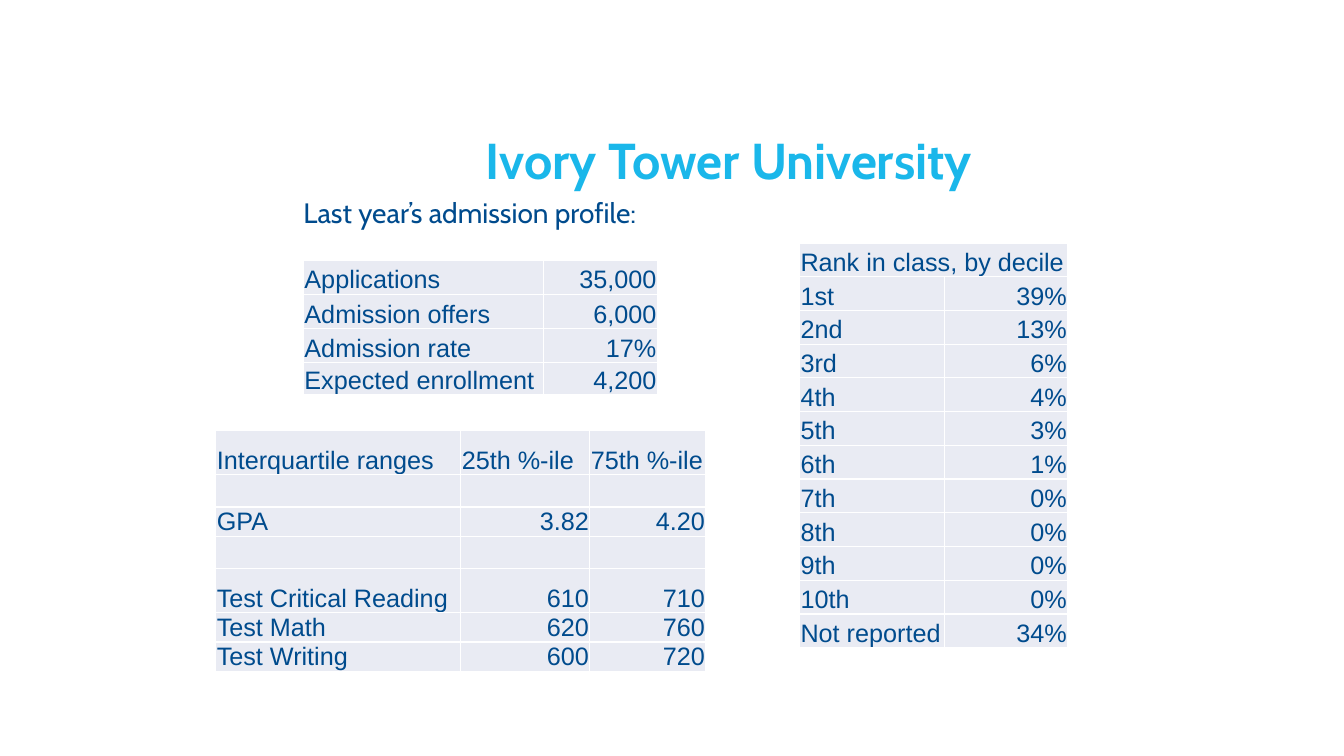
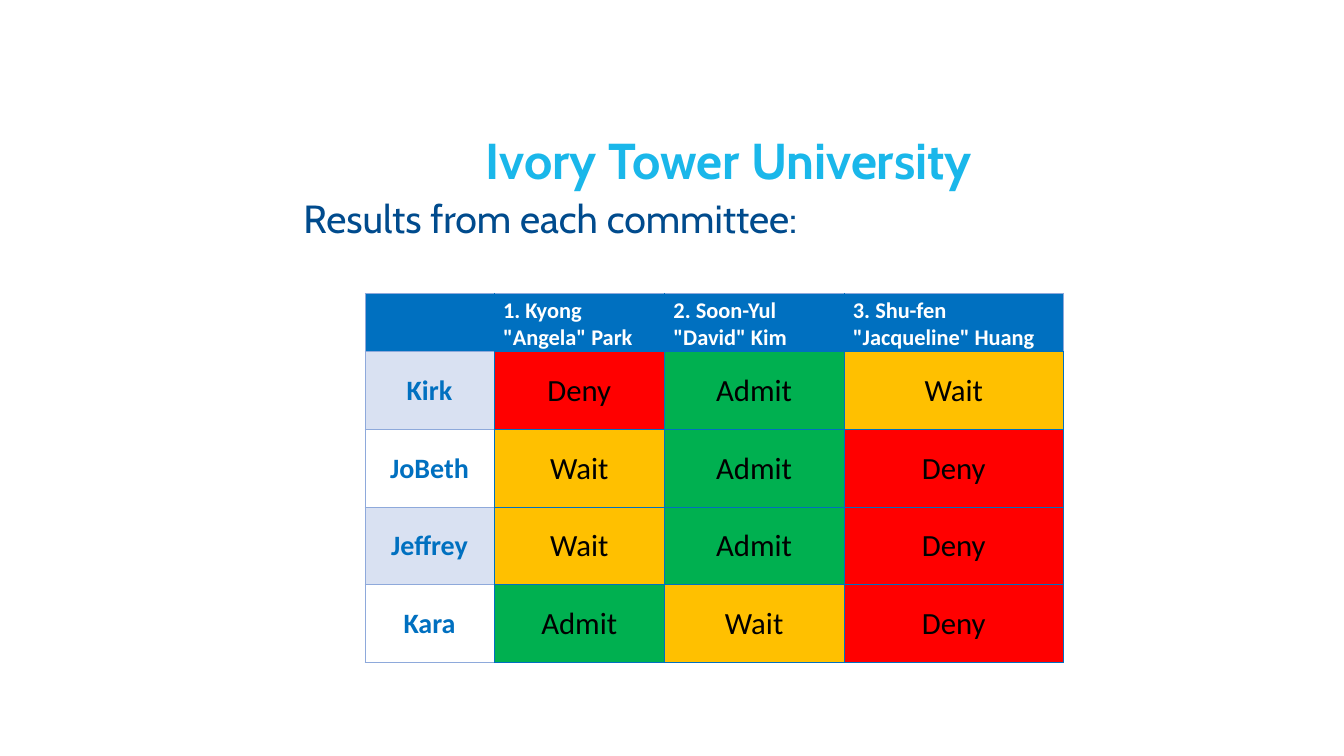
from lxml import etree
from pptx import Presentation
from pptx.dml.color import RGBColor
from pptx.enum.text import MSO_ANCHOR, MSO_AUTO_SIZE, PP_ALIGN
from pptx.oxml.ns import qn
from pptx.util import Inches, Pt

LEFT, CENTER, RIGHT = PP_ALIGN.LEFT, PP_ALIGN.CENTER, PP_ALIGN.RIGHT
TOP, MIDDLE, BOTTOM = MSO_ANCHOR.TOP, MSO_ANCHOR.MIDDLE, MSO_ANCHOR.BOTTOM
NO_AUTOFIT = MSO_AUTO_SIZE.NONE

SKY = RGBColor(0x1A, 0xB7, 0xEA)
NAVY = RGBColor(0x00, 0x4B, 0x8D)
WHITE = RGBColor(0xFF, 0xFF, 0xFF)
BLACK = RGBColor(0x00, 0x00, 0x00)
PALE = RGBColor(0xE9, 0xEB, 0xF3)
BLUE = RGBColor(0x00, 0x70, 0xC0)
LIGHT_BLUE = RGBColor(0x8E, 0xA9, 0xDB)
BAND = RGBColor(0xD9, 0xE1, 0xF2)
RED = RGBColor(0xFF, 0x00, 0x00)
GREEN = RGBColor(0x00, 0xB0, 0x50)
AMBER = RGBColor(0xFF, 0xC0, 0x00)

TITLE_FONT, DATA_FONT, RESULT_FONT = "Cabin", "Arial", "Calibri"
SIDES = "LRTB"
DECISION_FILLS = {"Admit": GREEN, "Deny": RED, "Wait": AMBER}

ADMISSIONS = [
    ("Applications", "35,000"),
    ("Admission offers", "6,000"),
    ("Admission rate", "17%"),
    ("Expected enrollment", "4,200"),
]
QUARTILES = [
    ("Interquartile ranges", "25th %-ile", "75th %-ile"),
    ("", "", ""),
    ("GPA", "3.82", "4.20"),
    ("", "", ""),
    ("Test Critical Reading", "610", "710"),
    ("Test Math", "620", "760"),
    ("Test Writing", "600", "720"),
]
DECILES = [
    ("Rank in class, by decile", ""),
    ("1st", "39%"),
    ("2nd", "13%"),
    ("3rd", "6%"),
    ("4th", "4%"),
    ("5th", "3%"),
    ("6th", "1%"),
    ("7th", "0%"),
    ("8th", "0%"),
    ("9th", "0%"),
    ("10th", "0%"),
    ("Not reported", "34%"),
]
RESULTS = [
    ("", '1. Kyong "Angela" Park', '2. Soon-Yul "David" Kim', '3. Shu-fen "Jacqueline" Huang'),
    ("Kirk", "Deny", "Admit", "Wait"),
    ("JoBeth", "Wait", "Admit", "Deny"),
    ("Jeffrey", "Wait", "Admit", "Deny"),
    ("Kara", "Admit", "Wait", "Deny"),
]


def style_paragraph(para, font_name, size, color, bold=False, align=LEFT):
    para.alignment = align
    font = para.font
    font.name, font.size, font.bold = font_name, Pt(size), bold
    font.color.rgb = color


def fill_placeholder(box, position, text):
    """Place a placeholder, give it one plain line of text and return the paragraph."""
    box.left, box.top, box.width, box.height = (Inches(length) for length in position)
    frame = box.text_frame
    frame.text = text
    frame.auto_size, frame.vertical_anchor = NO_AUTOFIT, TOP
    frame.margin_left = frame.margin_right = frame.margin_top = frame.margin_bottom = 0
    para = frame.paragraphs[0]
    para.line_spacing, para.space_before = 0.9, Pt(0)
    return para


def add_page(deck, lead, lead_size):
    page = deck.slides.add_slide(deck.slide_layouts[1])
    title = fill_placeholder(page.shapes.title, (1.79, 1.35, 10.88, 1.06), "Ivory Tower University")
    style_paragraph(title, TITLE_FONT, 36, SKY, bold=True, align=CENTER)
    body = fill_placeholder(page.placeholders[1], (3.01, 1.98, 8.16, 5.08), lead)
    properties = body._p.get_or_add_pPr()
    properties.set("marL", "0")
    properties.set("indent", "0")
    etree.SubElement(properties, qn("a:buNone"))
    style_paragraph(body, TITLE_FONT, lead_size, NAVY)
    return page


def set_borders(cell, colors, width):
    """Draw the four cell borders; colors follow the order of SIDES."""
    properties = cell._tc.get_or_add_tcPr()
    for index, (side, color) in enumerate(zip(SIDES, colors)):
        line = etree.Element(qn(f"a:ln{side}"), w=str(Pt(width)))
        fill = etree.SubElement(line, qn("a:solidFill"))
        etree.SubElement(fill, qn("a:srgbClr"), val=str(color))
        properties.insert(index, line)


def add_plain_table(page, left, top, widths, heights, rows):
    """Add a table without style bands, holding the texts of rows."""
    table = page.shapes.add_table(
        len(rows), len(widths), Inches(left), Inches(top),
        Inches(sum(widths)), Inches(sum(heights)),
    ).table
    table.first_row = table.horz_banding = False
    for column, width in zip(table.columns, widths):
        column.width = Inches(width)
    for row, height, texts in zip(table.rows, heights, rows):
        row.height = Inches(height)
        for cell, text in zip(row.cells, texts):
            cell.text = text
            cell.margin_left = cell.margin_right = cell.margin_top = Inches(0.01)
            cell.margin_bottom = 0
    return table


def add_data_table(page, left, top, widths, heights, rows, header_rows=0):
    table = add_plain_table(page, left, top, widths, heights, rows)
    for row_index, row in enumerate(table.rows):
        for column_index, cell in enumerate(row.cells):
            is_value = column_index > 0 and row_index >= header_rows
            cell.vertical_anchor = BOTTOM
            style_paragraph(cell.text_frame.paragraphs[0], DATA_FONT, 18, NAVY,
                            align=RIGHT if is_value else LEFT)
            set_borders(cell, [WHITE] * 4, 1)
            cell.fill.solid()
            cell.fill.fore_color.rgb = PALE
    return table


def result_borders(row, column, last_column):
    """Light lines round the header and the names, blue ones elsewhere."""
    is_light = (
        column == 0,
        row == 0 and column == last_column,
        row == 0 or column == 0,
        column == 0,
    )
    return [LIGHT_BLUE if light else BLUE for light in is_light]


def format_result_cell(cell, row, column):
    para = cell.text_frame.paragraphs[0]
    cell.vertical_anchor = MIDDLE
    if row == 0:
        cell.vertical_anchor = BOTTOM
        cell.margin_left = Inches(0.09)
        style_paragraph(para, RESULT_FONT, 16, WHITE, bold=True)
        color = BLUE
    elif column == 0:
        style_paragraph(para, RESULT_FONT, 20, BLUE, bold=True, align=CENTER)
        color = BAND if row % 2 else None
    else:
        style_paragraph(para, RESULT_FONT, 22, BLACK, align=CENTER)
        color = DECISION_FILLS[cell.text]
    if color is None:
        cell.fill.background()
    else:
        cell.fill.solid()
        cell.fill.fore_color.rgb = color


def add_result_table(page):
    widths = [1.28, 1.69, 1.78, 2.18]
    table = add_plain_table(page, 3.62, 2.91, widths, [0.58] + [0.77] * 4, RESULTS)
    for row_index, row in enumerate(table.rows):
        for column_index, cell in enumerate(row.cells):
            set_borders(cell, result_borders(row_index, column_index, len(widths) - 1), 0.5)
            format_result_cell(cell, row_index, column_index)


def main():
    deck = Presentation()
    deck.slide_width, deck.slide_height = Inches(13.33), Inches(7.5)

    profile = add_page(deck, "Last year’s admission profile:", 20)
    add_data_table(profile, 3.01, 2.58, [2.38, 1.13], [0.34, 0.34, 0.34, 0.32], ADMISSIONS)
    add_data_table(profile, 2.14, 4.27, [2.43, 1.28, 1.15],
                   [0.44, 0.32, 0.29, 0.32, 0.44, 0.29, 0.29], QUARTILES, header_rows=1)
    deciles = add_data_table(profile, 7.93, 2.41, [1.44, 1.22],
                             [4.02 / len(DECILES)] * len(DECILES), DECILES, header_rows=1)
    deciles.cell(0, 0).merge(deciles.cell(0, 1))

    add_result_table(add_page(deck, "Results from each committee:", 28))
    deck.save("out.pptx")


if __name__ == "__main__":
    main()
